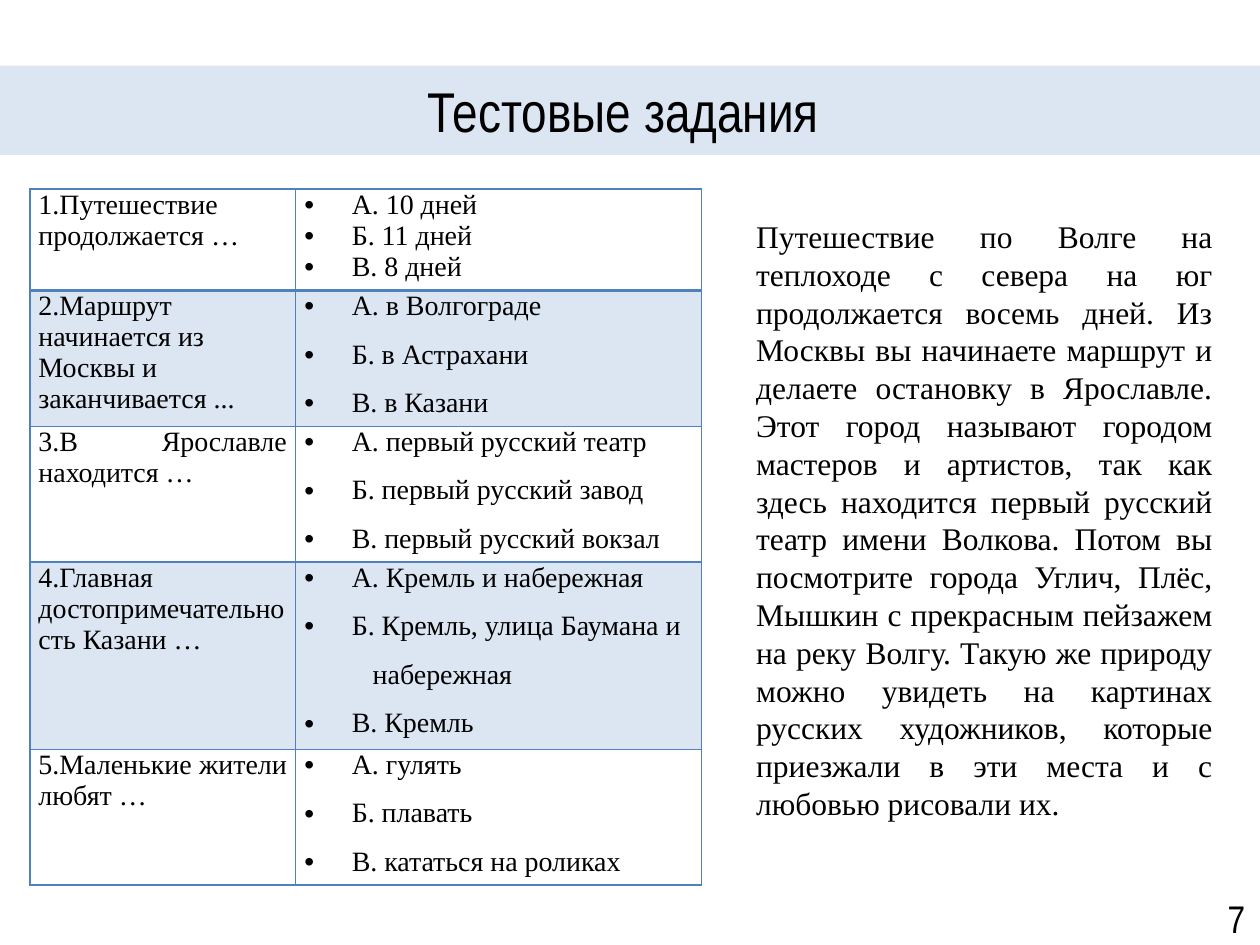
from dataclasses import dataclass

from lxml import etree
from pptx import Presentation
from pptx.dml.color import RGBColor
from pptx.enum.shapes import MSO_SHAPE
from pptx.enum.text import MSO_ANCHOR, PP_ALIGN
from pptx.oxml.ns import qn
from pptx.util import Pt

RECT = MSO_SHAPE.RECTANGLE
MIDDLE = MSO_ANCHOR.MIDDLE
LEFT, CENTER, JUSTIFY = PP_ALIGN.LEFT, PP_ALIGN.CENTER, PP_ALIGN.JUSTIFY

BLACK = RGBColor(0x00, 0x00, 0x00)
PALE_BLUE = RGBColor(0xDC, 0xE6, 0xF2)
BLUE = RGBColor(0x4F, 0x81, 0xBD)
NARROW, SERIF = "Arial Narrow", "Times New Roman"

BULLET_INDENT = 27
CONTINUATION_INDENT = 39
COLUMN_WIDTHS = (152, 232)


@dataclass
class Question:
    text: str
    answers: tuple[str, ...]
    height: float = 77.5
    align: PP_ALIGN = JUSTIFY
    spacing: float = 10
    continuation: int = -1  # index of an unbulleted wrapped line


QUESTIONS = (
    Question("1.Путешествие продолжается …",
             ("А. 10 дней", "Б. 11 дней", "В. 8 дней"), height=58, spacing=0),
    Question("2.Маршрут начинается из Москвы и заканчивается ...",
             ("А. в Волгограде", "Б. в Астрахани", "В. в Казани"), align=LEFT),
    Question("3.В Ярославле находится …",
             ("А. первый русский театр", "Б. первый русский завод",
              "В. первый русский вокзал")),
    Question("4.Главная достопримечательность Казани …",
             ("А. Кремль и набережная", "Б. Кремль, улица Баумана и",
              "набережная", "В. Кремль"), height=107, continuation=2),
    Question("5.Маленькие жители любят …",
             ("А. гулять", "Б. плавать", "В. кататься на роликах")),
)

STORY = (
    "Путешествие по Волге на теплоходе с севера на юг продолжается восемь дней. "
    "Из Москвы вы начинаете маршрут и делаете остановку в Ярославле. "
    "Этот город называют городом мастеров и артистов, так как здесь находится "
    "первый русский театр имени Волкова. Потом вы посмотрите города Углич, Плёс, "
    "Мышкин с прекрасным пейзажем на реку Волгу. Такую же природу можно увидеть "
    "на картинах русских художников, которые приезжали в эти места и с любовью "
    "рисовали их."
)


def write(tf, text: str, *, size: float = 16, font: str = SERIF, align=JUSTIFY,
          after: float = 0, indent: float = 0, bullet: bool = False) -> None:
    """Fill the first empty paragraph, or append a new one."""
    p = tf.paragraphs[0] if not tf.text else tf.add_paragraph()
    p.alignment = align
    p.space_after = Pt(after)
    r = p.add_run()
    r.text = text
    r.font.size, r.font.name = Pt(size), font
    r.font.color.rgb = BLACK
    if indent:
        pPr = p._p.get_or_add_pPr()
        pPr.set("marL", str(Pt(indent)))
        pPr.set("indent", str(-Pt(indent) if bullet else 0))
        if bullet:
            etree.SubElement(pPr, qn("a:buFont")).set("typeface", "Arial")
            etree.SubElement(pPr, qn("a:buChar")).set("char", "•")


def set_borders(cell, bottom: float, top: float) -> None:
    tcPr = cell._tc.get_or_add_tcPr()
    widths = {"lnL": 1, "lnR": 1, "lnT": top, "lnB": bottom}
    for i, (tag, width) in enumerate(widths.items()):
        ln = etree.Element(qn(f"a:{tag}"), w=str(Pt(width)))
        fill = etree.SubElement(ln, qn("a:solidFill"))
        etree.SubElement(fill, qn("a:srgbClr")).set("val", str(BLUE))
        tcPr.insert(i, ln)  # borders precede the fill


def add_text(slide, text: str, left: float, top: float, width: float,
             height: float, **fmt) -> None:
    tf = slide.shapes.add_textbox(Pt(left), Pt(top), Pt(width), Pt(height)).text_frame
    tf.word_wrap = True
    write(tf, text, **fmt)


def add_questions(slide, left: float, top: float) -> None:
    height = sum(q.height for q in QUESTIONS)
    table = slide.shapes.add_table(len(QUESTIONS), 2, Pt(left), Pt(top),
                                   Pt(sum(COLUMN_WIDTHS)), Pt(height)).table
    table.first_row = table.horz_banding = False
    for column, width in zip(table.columns, COLUMN_WIDTHS):
        column.width = Pt(width)

    for i, q in enumerate(QUESTIONS):
        table.rows[i].height = Pt(q.height)
        question, answers = table.cell(i, 0), table.cell(i, 1)
        for cell in (question, answers):
            cell.margin_left = cell.margin_right = Pt(5)
            cell.margin_top = cell.margin_bottom = 0
            if i % 2:
                cell.fill.solid()
                cell.fill.fore_color.rgb = PALE_BLUE
            else:
                cell.fill.background()
            set_borders(cell, bottom=2 if i == 0 else 1, top=2 if i == 1 else 1)

        write(question.text_frame, q.text, align=q.align, after=10)
        for j, answer in enumerate(q.answers):
            bullet = j != q.continuation
            write(answers.text_frame, answer, after=q.spacing, bullet=bullet,
                  indent=BULLET_INDENT if bullet else CONTINUATION_INDENT)


def main() -> None:
    prs = Presentation()
    prs.slide_width, prs.slide_height = Pt(720), Pt(540)
    slide = prs.slides.add_slide(prs.slide_layouts[6])

    # Title band
    sp = slide.shapes.add_shape(RECT, 0, Pt(37.5), Pt(720), Pt(51))
    sp.shadow.inherit = False
    sp.fill.solid()
    sp.fill.fore_color.rgb = PALE_BLUE
    sp.line.fill.background()
    sp.text_frame.vertical_anchor = MIDDLE
    write(sp.text_frame, "Тестовые задания ", size=32, font=NARROW, align=CENTER)

    # Page number
    add_text(slide, "7", 694.5, 508, 25.5, 34, size=22, font=NARROW, align=LEFT)

    # Reading text
    add_text(slide, STORY, 425, 120.5, 275, 356, size=18)

    # Test questions
    add_questions(slide, 17, 108)

    prs.save("out.pptx")


if __name__ == "__main__":
    main()
